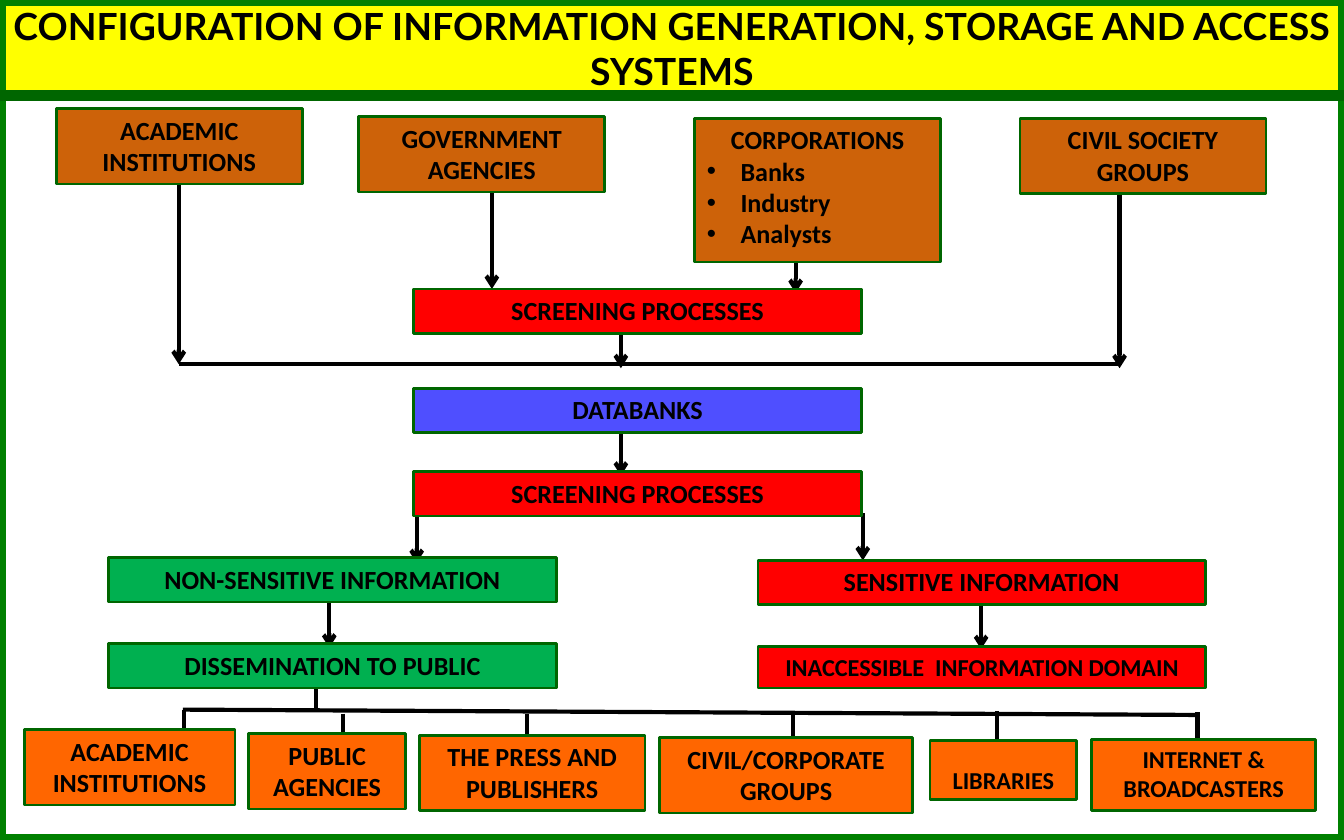
"""Build a flow chart slide of information generation, storage and access."""
from lxml import etree
from pptx import Presentation
from pptx.dml.color import RGBColor
from pptx.enum.shapes import MSO_CONNECTOR, MSO_SHAPE
from pptx.enum.text import MSO_ANCHOR, MSO_AUTO_SIZE, PP_ALIGN
from pptx.oxml.ns import qn
from pptx.util import Inches, Pt

RECTANGLE = MSO_SHAPE.RECTANGLE
STRAIGHT = MSO_CONNECTOR.STRAIGHT
CENTER, LEFT = PP_ALIGN.CENTER, PP_ALIGN.LEFT
MIDDLE, TOP, BOTTOM = MSO_ANCHOR.MIDDLE, MSO_ANCHOR.TOP, MSO_ANCHOR.BOTTOM
NO_FIT = MSO_AUTO_SIZE.NONE

WIDTH, HEIGHT = 10, 6.25
TITLE_HEIGHT = 0.71
BULLET_INDENT = 0.25
COLORS = {
    "ink": "000000", "title": "FFFF00", "frame": "008000", "edge": "006600",
    "source": "CD6209", "screen": "FF0000", "bank": "4F4FFF",
    "public": "00B050", "user": "FF6600",
}
TITLE = "CONFIGURATION OF INFORMATION GENERATION, STORAGE AND ACCESS SYSTEMS"

SOURCE_SIZE = (1.83, 0.56)
SOURCES = [
    ("ACADEMIC INSTITUTIONS", 0.42, 0.81),
    ("GOVERNMENT AGENCIES", 2.67, 0.87),
    ("CIVIL SOCIETY GROUPS", 7.59, 0.88),
]
CORPORATIONS = ("CORPORATIONS", 5.17, 0.88, 1.83, 1.07)
CORPORATION_KINDS = ["Banks", "Industry", "Analysts"]

STAGE_SIZE = (3.33, 0.33)
STAGES = [
    ("SCREENING PROCESSES", 3.08, 2.15, "screen"),
    ("DATABANKS", 3.08, 2.89, "bank"),
    ("SCREENING PROCESSES", 3.08, 3.51, "screen"),
    ("NON-SENSITIVE INFORMATION", 0.81, 4.15, "public"),
    ("DISSEMINATION TO PUBLIC", 0.81, 4.79, "public"),
    ("SENSITIVE INFORMATION", 5.64, 4.17, "screen"),
]
INACCESSIBLE = ("INACCESSIBLE  INFORMATION DOMAIN", 5.64, 4.81, 3.33, 0.31)

USERS = [
    ("ACADEMIC INSTITUTIONS", 0.18, 5.43, 1.57, 0.56, 14, TOP),
    ("PUBLIC AGENCIES", 1.85, 5.46, 1.17, 0.56, 14, TOP),
    ("THE PRESS AND PUBLISHERS", 3.12, 5.47, 1.68, 0.56, 14, TOP),
    ("CIVIL/CORPORATE GROUPS", 4.91, 5.49, 1.88, 0.56, 14, TOP),
    ("LIBRARIES", 6.92, 5.51, 1.09, 0.44, 13, BOTTOM),
    ("INTERNET & BROADCASTERS", 8.12, 5.5, 1.67, 0.53, 13, TOP),
]

ARROWS = [
    (1.33, 1.37, 2.71), (3.66, 1.39, 2.15), (5.92, 1.83, 2.18),
    (8.33, 1.37, 2.74), (4.62, 2.43, 2.74), (4.62, 3.19, 3.54),
    (3.1, 3.84, 4.19), (6.42, 3.82, 4.17), (2.45, 4.47, 4.82),
    (7.3, 4.49, 4.83),
]
DROPS = [
    (2.35, 4.99, 5.3), (1.37, 5.28, 5.6), (2.55, 5.31, 5.62),
    (3.92, 5.31, 5.62), (5.9, 5.31, 5.62), (7.42, 5.29, 5.6),
    (8.91, 5.3, 5.62),
]
RAILS = [(1.33, 2.71, 8.33, 2.71), (1.36, 5.28, 8.92, 5.32)]


def rgb(name):
    return RGBColor.from_string(COLORS[name])


def write(para, text, size=14, font="Calibri", align=CENTER, bullet=False):
    para.alignment = align
    para.line_spacing = 1.0
    span = para.add_run()
    span.text = text
    span.font.size = Pt(size)
    span.font.name = font
    span.font.bold = True
    span.font.color.rgb = rgb("ink")
    if bullet:
        properties = para._p.get_or_add_pPr()
        properties.set("marL", str(Inches(BULLET_INDENT)))
        properties.set("indent", str(-Inches(BULLET_INDENT)))
        etree.SubElement(properties, qn("a:buFont")).set("typeface", "Arial")
        etree.SubElement(properties, qn("a:buChar")).set("char", "•")


def set_frame(frame, anchor, side):
    frame.word_wrap = True
    frame.auto_size = NO_FIT
    frame.vertical_anchor = anchor
    frame.margin_left = frame.margin_right = Inches(side)
    frame.margin_top = frame.margin_bottom = Inches(0.04)


def add_box(page, text, left, top, width, height, fill, size=14, anchor=TOP):
    box = page.shapes.add_shape(RECTANGLE, *map(Inches, (left, top, width, height)))
    box.shadow.inherit = False
    box.fill.solid()
    box.fill.fore_color.rgb = rgb(fill)
    box.line.color.rgb = rgb("edge")
    box.line.width = Pt(1.5)
    set_frame(box.text_frame, anchor, 0.09)
    write(box.text_frame.paragraphs[0], text, size=size)
    return box


def add_line(page, x1, y1, x2, y2, color="ink", weight=2.25, arrow=False):
    line = page.shapes.add_connector(STRAIGHT, *map(Inches, (x1, y1, x2, y2)))
    line.line.color.rgb = rgb(color)
    line.line.width = Pt(weight)
    if arrow:
        outline = line.line._get_or_add_ln()
        etree.SubElement(outline, qn("a:tailEnd")).set("type", "arrow")
    etree.SubElement(line._element.spPr, qn("a:effectLst"))


def add_title(page):
    title = page.shapes.title
    title.left, title.top = 0, 0
    title.width, title.height = Inches(WIDTH), Inches(TITLE_HEIGHT)
    title.fill.solid()
    title.fill.fore_color.rgb = rgb("title")
    set_frame(title.text_frame, MIDDLE, 0.08)
    write(title.text_frame.paragraphs[0], TITLE, size=20, font="Lato")


def add_border(page):
    border = page.shapes.add_shape(RECTANGLE, 0, 0, Inches(WIDTH), Inches(HEIGHT))
    border.shadow.inherit = False
    border.fill.background()
    border.line.color.rgb = rgb("frame")
    border.line.width = Pt(6)
    add_line(page, 0, TITLE_HEIGHT, WIDTH, TITLE_HEIGHT, color="edge", weight=6)


def main():
    deck = Presentation()
    deck.slide_width, deck.slide_height = Inches(WIDTH), Inches(HEIGHT)
    page = deck.slides.add_slide(deck.slide_layouts[5])
    add_title(page)
    add_border(page)
    for x, top, bottom in ARROWS:
        add_line(page, x, top, x, bottom, arrow=True)
    for x, top, bottom in DROPS:
        add_line(page, x, top, x, bottom)
    for rail in RAILS:
        add_line(page, *rail)
    for text, left, top in SOURCES:
        add_box(page, text, left, top, *SOURCE_SIZE, "source")
    corporations = add_box(page, *CORPORATIONS, "source")
    for kind in CORPORATION_KINDS:
        para = corporations.text_frame.add_paragraph()
        write(para, kind, align=LEFT, bullet=True)
    for text, left, top, fill in STAGES:
        add_box(page, text, left, top, *STAGE_SIZE, fill)
    add_box(page, *INACCESSIBLE, "screen", size=13)
    for *place, size, anchor in USERS:
        add_box(page, *place, "user", size=size, anchor=anchor)
    deck.save("out.pptx")


if __name__ == "__main__":
    main()
